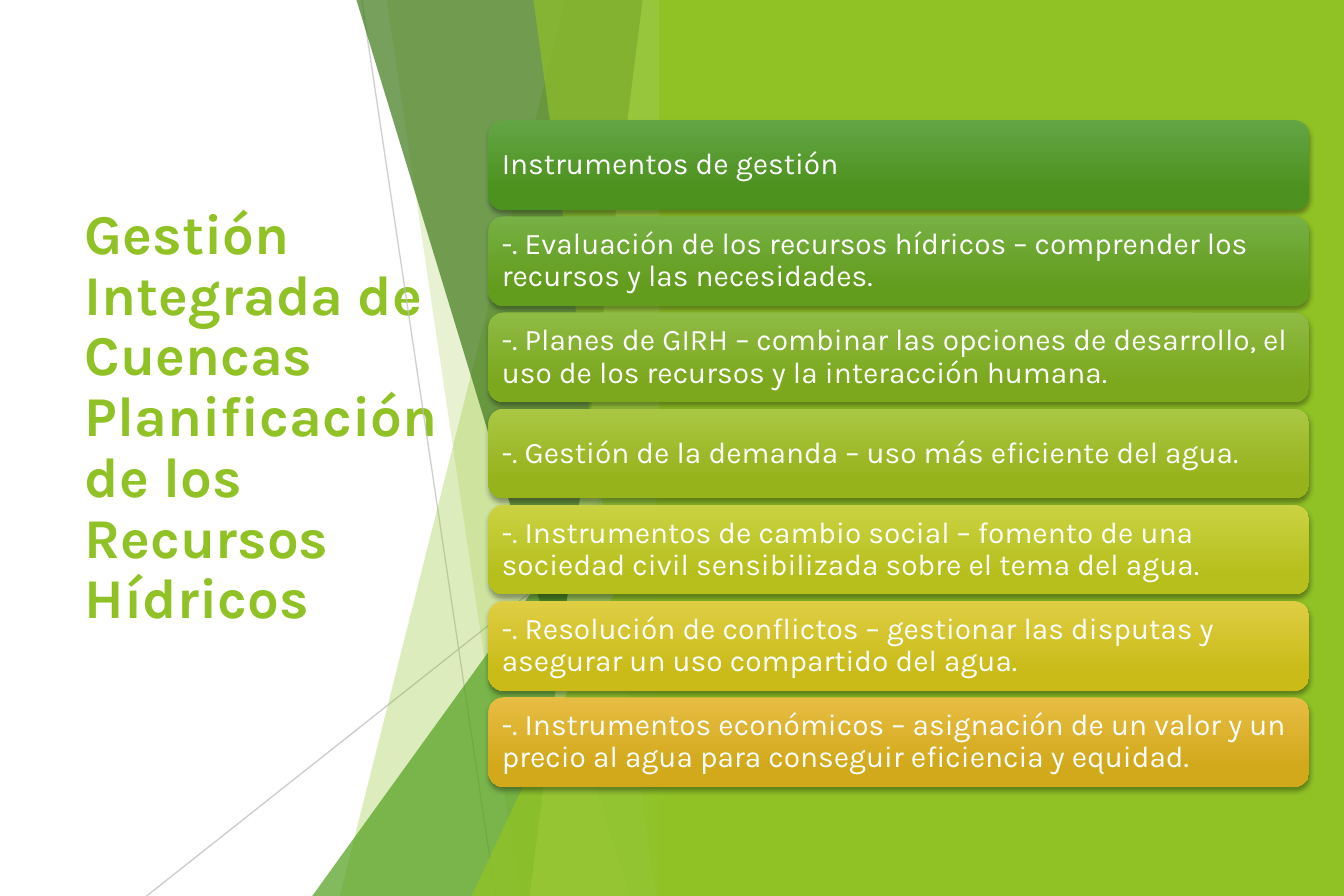
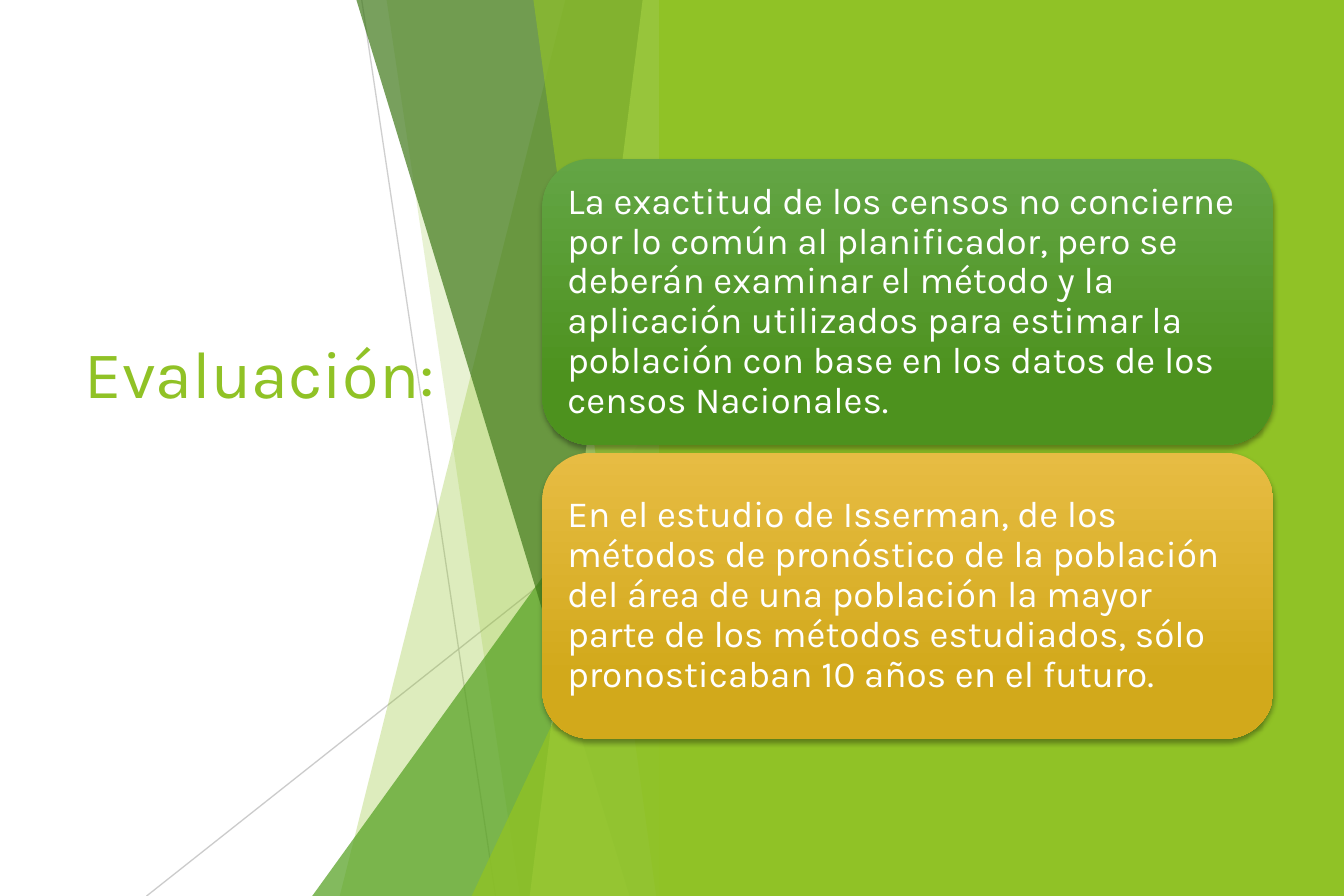
"""Build two slides with a faceted green band, a title and rounded cards."""
from dataclasses import dataclass

from lxml import etree
from pptx import Presentation
from pptx.dml.color import RGBColor
from pptx.enum.shapes import MSO_CONNECTOR, MSO_SHAPE
from pptx.enum.text import MSO_ANCHOR, MSO_AUTO_SIZE, PP_ALIGN
from pptx.oxml.ns import qn
from pptx.util import Pt

RECT = MSO_SHAPE.RECTANGLE
ROUND = MSO_SHAPE.ROUNDED_RECTANGLE
PEAK = MSO_SHAPE.ISOSCELES_TRIANGLE
LINE = MSO_CONNECTOR.STRAIGHT
MIDDLE = MSO_ANCHOR.MIDDLE
LEFT = PP_ALIGN.LEFT
FIXED = MSO_AUTO_SIZE.NONE


@dataclass(frozen=True)
class Theme:
    font: str = "Karla"
    white: str = "FFFFFF"
    lime: str = "90C226"
    leaf: str = "54A021"
    moss: str = "3F7819"
    pale: str = "C0E474"
    gray: str = "BFBFBF"
    black: str = "000000"
    green: tuple = ("63A545", "4D921E")
    amber: tuple = ("E7BC43", "D2A91B")
    ramp: tuple = (("77B044", "629D1E"), ("8EBB44", "7BA81D"),
                   ("AAC744", "97B31C"), ("CAD243", "B6BF1B"),
                   ("DFCE43", "CABB19"))
    head: int = 32
    large: int = 38
    small: int = 17
    body: int = 21


THEME = Theme()
WIDTH, HEIGHT = 765.35, 510.24
EDGE = 382.5
SPLIT = 375.3


def tag(parent, name, **attrs):
    return etree.SubElement(parent, qn(name), attrs)


def fade(shape, alpha):
    color = shape.element.spPr.find(".//" + qn("a:srgbClr"))
    tag(color, "a:alpha", val=str(alpha * 1000))


def put(frame, text, size, color, bold=False, space=0.9, inset=None):
    frame.word_wrap = True
    frame.auto_size = FIXED
    frame.vertical_anchor = MIDDLE
    if inset:
        (frame.margin_left, frame.margin_top,
         frame.margin_right, frame.margin_bottom) = map(Pt, inset)
    para = frame.paragraphs[0]
    para.text = text
    para.alignment = LEFT
    para.line_spacing = space
    para.space_before = Pt(0)
    for run in para.runs:
        run.font.name = THEME.font
        run.font.size = Pt(size)
        run.font.bold = bold
        run.font.color.rgb = RGBColor.from_string(color)


class Deck:
    def __init__(self):
        self.show = Presentation()
        self.show.slide_width = Pt(WIDTH)
        self.show.slide_height = Pt(HEIGHT)
        self.slide = None

    def page(self, title, size, gap, **style):
        self.slide = self.show.slides.add_slide(self.show.slide_layouts[5])
        self.title(title, size, gap, **style)
        self.scene()

    def title(self, text, size, gap, **style):
        box = self.slide.shapes.title
        box.left, box.top, box.width, box.height = map(
            Pt, (41, 103, 222.5, 304.6))
        put(box.text_frame, text, size, THEME.lime,
            inset=(7.2, 3.6, 7.2, 3.6 + gap), **style)

    def paint(self, shape, color, alpha=100):
        shape.shadow.inherit = False
        shape.fill.solid()
        shape.fill.fore_color.rgb = RGBColor.from_string(color)
        shape.line.fill.background()
        if alpha < 100:
            fade(shape, alpha)

    def shape(self, kind, x, y, wide, high):
        return self.slide.shapes.add_shape(
            kind, Pt(x), Pt(y), Pt(wide), Pt(high))

    def line(self, x1, y1, x2, y2, alpha):
        line = self.slide.shapes.add_connector(
            LINE, Pt(x1), Pt(y1), Pt(x2), Pt(y2))
        line.line.width = Pt(0.75)
        line.line.color.rgb = RGBColor.from_string(THEME.gray)
        fade(line, alpha)
        tag(line.element.spPr, "a:effectLst")

    def beam(self, top, base, color, alpha):
        path = self.slide.shapes.build_freeform(Pt(top), Pt(0), scale=1.0)
        path.add_line_segments(
            [(Pt(EDGE), Pt(0)), (Pt(EDGE), Pt(HEIGHT)),
             (Pt(base), Pt(HEIGHT))], close=True)
        self.paint(path.convert_to_shape(), color, alpha)

    def wedge(self, x, y, color, alpha):
        peak = self.shape(PEAK, x, y, EDGE - x, HEIGHT - y)
        peak.adjustments[0] = 1
        self.paint(peak, color, alpha)

    def scene(self):
        self.line(206, 0, 282.2, HEIGHT, 75)
        self.line(EDGE, 273.6, 83.5, HEIGHT, 80)
        self.beam(322, 193.5, THEME.lime, 30)
        self.beam(220.2, 296, THEME.lime, 20)
        self.wedge(177.8, 226.8, THEME.leaf, 72)
        self.beam(203, 358.5, THEME.moss, 70)
        self.beam(366, 301.7, THEME.pale, 70)
        self.beam(303.8, 373.7, THEME.lime, 65)
        self.wedge(268.6, 267.1, THEME.lime, 80)
        panel = self.shape(RECT, SPLIT, 0, WIDTH - SPLIT, HEIGHT)
        self.paint(panel, THEME.lime)

    def card(self, text, colors, size, *area):
        card = self.shape(ROUND, *area)
        card.line.fill.background()
        card.fill.gradient()
        card.fill.gradient_angle = 270
        stops = zip(card.fill.gradient_stops, colors, (0, 0.78))
        for stop, color, place in stops:
            stop.color.rgb = RGBColor.from_string(color)
            stop.position = place
        self.shade(card)
        put(card.text_frame, text, size, THEME.white, inset=[size * 0.3] * 4)

    def shade(self, shape):
        shape.shadow.inherit = False
        effect = shape.element.spPr.find(qn("a:effectLst"))
        outer = tag(effect, "a:outerShdw", blurRad=str(Pt(3)),
                    dist=str(Pt(2)), dir="5400000", rotWithShape="0")
        color = tag(outer, "a:srgbClr", val=THEME.black)
        tag(color, "a:alpha", val="35000")

    def stack(self, texts, ramp, size, x, y, wide, high, gap):
        for row, (text, colors) in enumerate(zip(texts, ramp)):
            top = y + row * (high + gap)
            self.card(text, colors, size, x, top, wide, high)


def main():
    deck = Deck()
    deck.page("Gestión Integrada de Cuencas\n"
              "Planificación de los Recursos Hídricos",
              THEME.head, 34, bold=True)
    tools = (
        "Instrumentos de gestión",
        "-. Evaluación de los recursos hídricos – comprender los recursos "
        "y las necesidades.",
        "-. Planes de GIRH – combinar las opciones de desarrollo, el uso de "
        "los recursos y la interacción humana.",
        "-. Gestión de la demanda – uso más eficiente del agua.",
        "-. Instrumentos de cambio social – fomento de una sociedad civil "
        "sensibilizada sobre el tema del agua.",
        "-. Resolución de conflictos – gestionar las disputas y asegurar un "
        "uso compartido del agua.",
        "-. Instrumentos económicos – asignación de un valor y un precio al "
        "agua para conseguir eficiencia y equidad.",
    )
    deck.stack(tools, (THEME.green, *THEME.ramp, THEME.amber), THEME.small,
               278.2, 68.4, 467.3, 51, 3.78)

    deck.page("Evaluación:", THEME.large, 87, space=1)
    notes = (
        "La exactitud de los censos no concierne por lo común al "
        "planificador, pero se deberán examinar el método y la aplicación "
        "utilizados para estimar la población con base en los datos de los "
        "censos Nacionales.",
        "En el estudio de Isserman, de los métodos de pronóstico de la "
        "población del área de una población la mayor parte de los métodos "
        "estudiados, sólo pronosticaban 10 años en el futuro.",
    )
    deck.stack(notes, (THEME.green, THEME.amber), THEME.body,
               308.9, 90.6, 416.2, 162.7, 4.6)
    deck.show.save("out.pptx")


if __name__ == "__main__":
    main()
